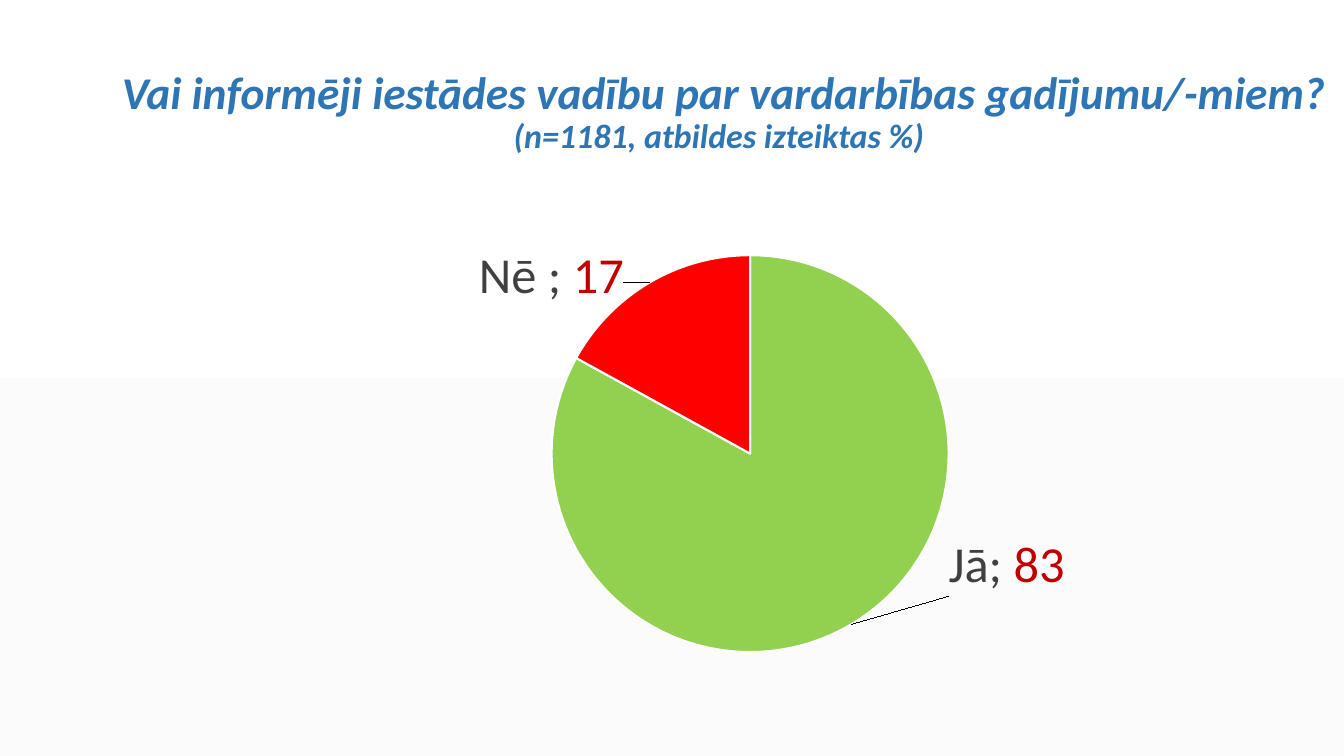
from pptx import Presentation
from pptx.chart.data import CategoryChartData as ChartData
from pptx.dml.color import RGBColor as RGB
from pptx.enum.chart import XL_CHART_TYPE as Kind, XL_LABEL_POSITION as Spot
from pptx.enum.text import MSO_ANCHOR as Anchor, MSO_AUTO_SIZE as Fit, PP_ALIGN as Align
from pptx.oxml import parse_xml
from pptx.oxml.ns import nsdecls
from pptx.util import Inches, Pt

FONT = "Calibri"
HUES = {"white": "FFFFFF", "pale": "FBFBFB", "blue": "2E75B6", "green": "92D050",
        "red": "FF0000", "dark": "404040", "value": "C00000", "black": "000000"}
# Answer, percent, slice colour, label shift as a share of the chart
ANSWERS = [("Jā", 83, "green", (0.085, -0.18)),
           ("Nē ", 17, "red", (-0.02, 0.055))]


def hue(name):
    return RGB.from_string(HUES[name])


def add_run(para, text, size, color, bold=False, italic=False):
    run = para.add_run()
    run.text = text
    font = run.font
    font.name, font.size = FONT, Pt(size)
    font.bold, font.italic = bold, italic
    font.color.rgb = hue(color)


def layout_xml(**parts):
    vals = "".join(f'<c:{key} val="{val}"/>' for key, val in parts.items())
    return parse_xml(f'<c:layout {nsdecls("c")}><c:manualLayout>{vals}'
                     '</c:manualLayout></c:layout>')


def paint_back(slide):
    fill = slide.background.fill
    fill.gradient()
    fill.gradient_angle = 270
    for stop, name, pos in zip(fill.gradient_stops, ("white", "pale"), (0, 1)):
        stop.color.rgb = hue(name)
        stop.position = pos


def put_title(slide, left, top, width, height):
    title = slide.shapes.title
    title.left, title.top = Inches(left), Inches(top)
    title.width, title.height = Inches(width), Inches(height)
    frame = title.text_frame
    frame.word_wrap = True
    frame.auto_size = Fit.NONE
    frame.vertical_anchor = Anchor.MIDDLE
    para = frame.paragraphs[0]
    para.alignment = Align.CENTER
    para.line_spacing = 0.9
    add_run(para, " Vai informēji iestādes vadību par vardarbības gadījumu/-miem?",
            32.4, "blue", True, True)
    para.add_line_break()
    add_run(para, "(n=1181, atbildes izteiktas %)", 24.3, "blue", True, True)


def put_pie(slide, left, top, width, height):
    data = ChartData()
    data.categories = [answer[0] for answer in ANSWERS]
    data.add_series("Series 1", [answer[1] for answer in ANSWERS])
    chart = slide.shapes.add_chart(Kind.PIE, Inches(left), Inches(top),
                                   Inches(width), Inches(height), data).chart
    chart.has_legend = chart.has_title = False
    chart.font.name, chart.font.size = FONT, Pt(10)
    chart.font.color.rgb = hue("black")

    # Plot area, with the pie a little right of centre
    area = chart.plots[0]
    area.vary_by_categories = True
    side = 3.93
    box = area._element.getparent()
    for old in box.findall("{*}layout"):
        box.remove(old)
    box.insert(0, layout_xml(layoutTarget="inner", xMode="edge", yMode="edge",
                             x=0.33, y=0.13, w=round(side / width, 2),
                             h=round(side / height, 2)))

    # Labels shared by all slices
    area.has_data_labels = True
    labels = area.data_labels
    labels.show_category_name = labels.show_value = True
    labels.show_percentage = False
    labels.position = Spot.OUTSIDE_END
    labels.font.name, labels.font.size = FONT, Pt(36)
    labels.font.color.rgb = hue("dark")

    # Slices and their two-colour labels
    for idx, (name, value, color, shift) in enumerate(ANSWERS):
        point = area.series[0].points[idx]
        point.format.fill.solid()
        point.format.fill.fore_color.rgb = hue(color)
        point.format.line.color.rgb = hue("white")
        point.format.line.width = Pt(1.5)
        label = point.data_label
        para = label.text_frame.paragraphs[0]
        add_run(para, f"{name}; ", 36, "dark")
        add_run(para, str(value), 36, "value")
        label.position = Spot.OUTSIDE_END
        node = para._p.xpath("ancestor::c:dLbl")[0]
        node.insert(1, layout_xml(x=shift[0], y=shift[1]))


def main():
    deck = Presentation()
    deck.slide_width, deck.slide_height = Inches(13.33), Inches(7.5)
    slide = deck.slides.add_slide(deck.slide_layouts[5])
    paint_back(slide)
    put_title(slide, 0.92, 0.4, 12.42, 1.45)
    put_pie(slide, 1.82, 1.85, 11.02, 5.25)
    deck.save("out.pptx")


if __name__ == "__main__":
    main()
